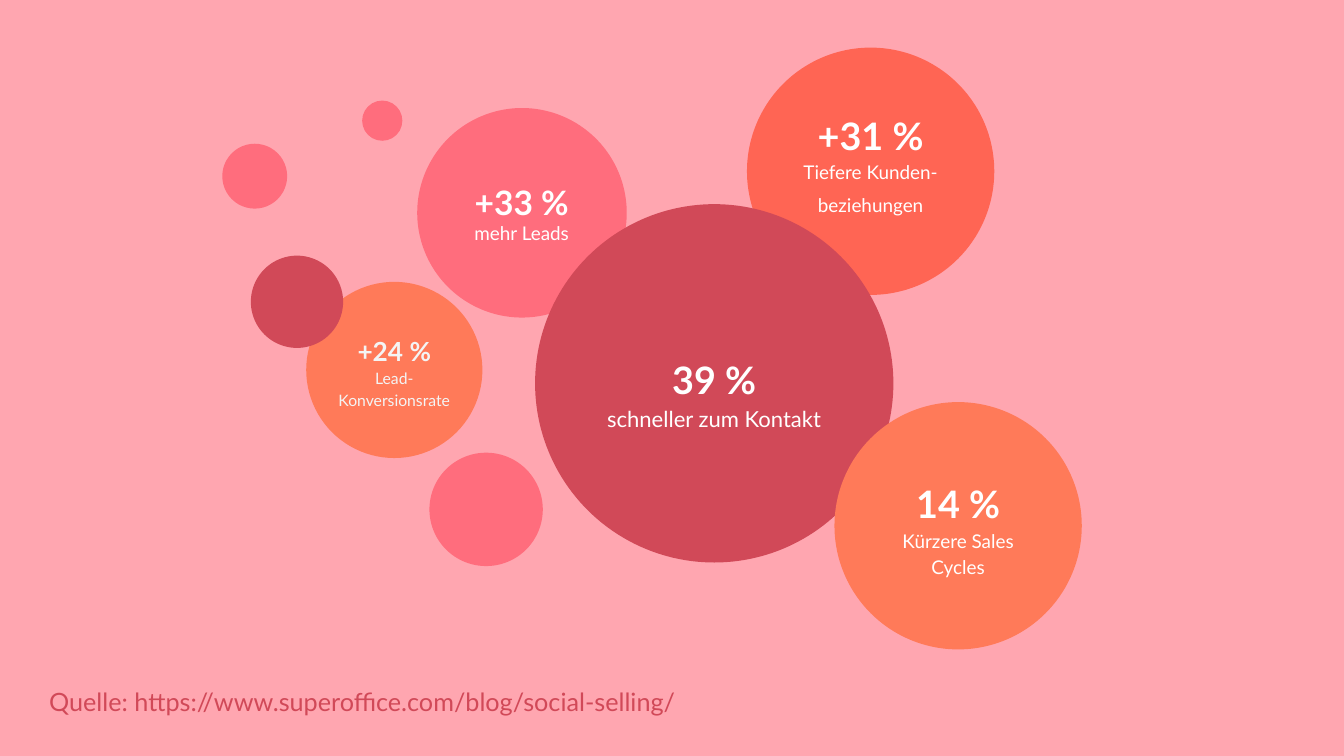
from dataclasses import dataclass

from pptx import Presentation
from pptx.dml.color import RGBColor
from pptx.enum.shapes import MSO_SHAPE
from pptx.enum.text import MSO_ANCHOR, MSO_AUTO_SIZE, PP_ALIGN
from pptx.oxml.ns import qn
from pptx.util import Cm, Pt

OVAL, RECTANGLE = MSO_SHAPE.OVAL, MSO_SHAPE.RECTANGLE
CENTER, LEFT = PP_ALIGN.CENTER, PP_ALIGN.LEFT
MIDDLE, TOP = MSO_ANCHOR.MIDDLE, MSO_ANCHOR.TOP
NO_AUTOFIT = MSO_AUTO_SIZE.NONE


@dataclass(frozen=True)
class Theme:
    font: str = "Lato"
    background: str = "FFA6B0"
    pink: str = "FF6D7D"
    crimson: str = "D14958"
    orange: str = "FF7A59"
    coral: str = "FF6554"
    white: str = "FFFFFF"
    off_white: str = "F4F4F4"
    value_large: int = 36
    value_medium: int = 32
    value_small: int = 25
    caption_large: int = 21
    caption: int = 18
    caption_small: int = 15
    source: int = 24


THEME = Theme()


def rgb(code):
    return RGBColor.from_string(code)


def write(paragraph, text, *, size, color, bold=False, align=CENTER,
          spacing=1.15, before=0):
    """Fill one paragraph; a newline in the text becomes a line break."""
    paragraph.alignment = align
    paragraph.line_spacing = spacing
    paragraph.space_before = Pt(before)
    for number, line in enumerate(text.split("\n")):
        if number:
            paragraph.add_line_break()
        run = paragraph.add_run()
        run.text = line
        run.font.name = THEME.font
        run.font.size = Pt(size)
        run.font.bold = bold
        run.font.color.rgb = rgb(color)


def set_frame(frame, inset, anchor, bottom=None):
    frame.word_wrap = True
    frame.auto_size = NO_AUTOFIT
    frame.vertical_anchor = anchor
    frame.margin_left = frame.margin_right = frame.margin_top = Cm(inset)
    frame.margin_bottom = Cm(inset if bottom is None else bottom)


def add_area(shapes, kind, box, fill):
    area = shapes.add_shape(kind, *(Cm(length) for length in box))
    area.shadow.inherit = False
    area.fill.solid()
    area.fill.fore_color.rgb = rgb(fill)
    area.line.fill.background()
    return area


def add_circle(shapes, left, top, diameter, fill):
    return add_area(shapes, OVAL, (left, top, diameter, diameter), fill)


def write_figure(area, value, *captions, value_size=THEME.value_large,
                 caption_size=THEME.caption, color=THEME.white, spacing=1.15,
                 inset=0.46, bottom=None, caption_gap=0):
    """Put a bold value above its caption lines."""
    frame = area.text_frame
    set_frame(frame, inset, MIDDLE, bottom)
    write(frame.paragraphs[0], value, size=value_size, color=color, bold=True,
          spacing=spacing)
    for number, caption in enumerate(captions):
        write(frame.add_paragraph(), caption, size=caption_size, color=color,
              spacing=spacing, before=caption_gap if number else 0)


def add_labelled_circle(slide, left, top, diameter, fill, label_box):
    """Group a circle with a label area, placed relative to the circle."""
    group = slide.shapes.add_group_shape()
    add_circle(group.shapes, left, top, diameter, fill)
    dx, dy, width, height = label_box
    return add_area(group.shapes, RECTANGLE,
                    (left + dx, top + dy, width, height), fill)


def add_bubbles(slide, left, top):
    """Draw the bubble cluster from its upper left corner, back to front."""
    shapes = slide.shapes

    leads = add_labelled_circle(slide, left + 6.55, top + 2.03, 7.04,
                                THEME.pink, (1.12, 1.19, 4.78, 4.67))
    write_figure(leads, "+33 %", "mehr Leads", spacing=1.0,
                 value_size=THEME.value_medium)

    # Decorative dots behind the conversion bubble
    for dx, dy, diameter in ((6.96, 13.61, 3.81), (0, 3.23, 2.18)):
        add_circle(shapes, left + dx, top + dy, diameter, THEME.pink)

    conversion = add_circle(shapes, left + 2.82, top + 7.87, 5.92, THEME.orange)
    write_figure(conversion, "+24 %", "Lead-\nKonversionsrate", inset=0,
                 value_size=THEME.value_small, color=THEME.off_white,
                 caption_size=THEME.caption_small)

    relations = add_circle(shapes, left + 17.63, top, 8.31, THEME.coral)
    write_figure(relations, "+31 %", "Tiefere Kunden-", "beziehungen",
                 bottom=1.15, caption_gap=6.5)

    # Decorative dots in front
    for dx, dy, diameter, fill in ((0.96, 6.99, 3.1, THEME.crimson),
                                   (4.7, 1.78, 1.35, THEME.pink)):
        add_circle(shapes, left + dx, top + dy, diameter, fill)

    contact = add_labelled_circle(slide, left + 10.51, top + 5.26, 12.04,
                                  THEME.crimson, (1.42, 3.4, 9.19, 5.74))
    write_figure(contact, "39 %", "schneller zum Kontakt",
                 caption_size=THEME.caption_large)

    cycles = add_circle(shapes, left + 20.57, top + 11.91, 8.31, THEME.orange)
    write_figure(cycles, "14 %", "Kürzere Sales Cycles")


def add_source(slide, left, top, width, height):
    """Place the source line in the body placeholder."""
    source = slide.placeholders[1]
    source.left, source.top = Cm(left), Cm(top)
    source.width, source.height = Cm(width), Cm(height)
    set_frame(source.text_frame, 0.53, TOP)
    paragraph = source.text_frame.paragraphs[0]
    properties = paragraph._p.get_or_add_pPr()
    properties.set("marL", "0")
    properties.set("indent", "0")
    properties.append(properties.makeelement(qn("a:buNone"), {}))
    write(paragraph, "Quelle: https://www.superoffice.com/blog/social-selling/",
          size=THEME.source, color=THEME.crimson, align=LEFT, spacing=1.3)


def main():
    deck = Presentation()
    deck.slide_width, deck.slide_height = Cm(45.16), Cm(25.4)
    slide = deck.slides.add_slide(deck.slide_layouts[1])
    slide.background.fill.solid()
    slide.background.fill.fore_color.rgb = rgb(THEME.background)

    # The slide has no title
    title = slide.shapes.title.element
    title.getparent().remove(title)

    add_source(slide, 1.12, 22.22, 42.9, 2.46)
    add_bubbles(slide, 7.47, 1.6)
    deck.save("out.pptx")


if __name__ == "__main__":
    main()
